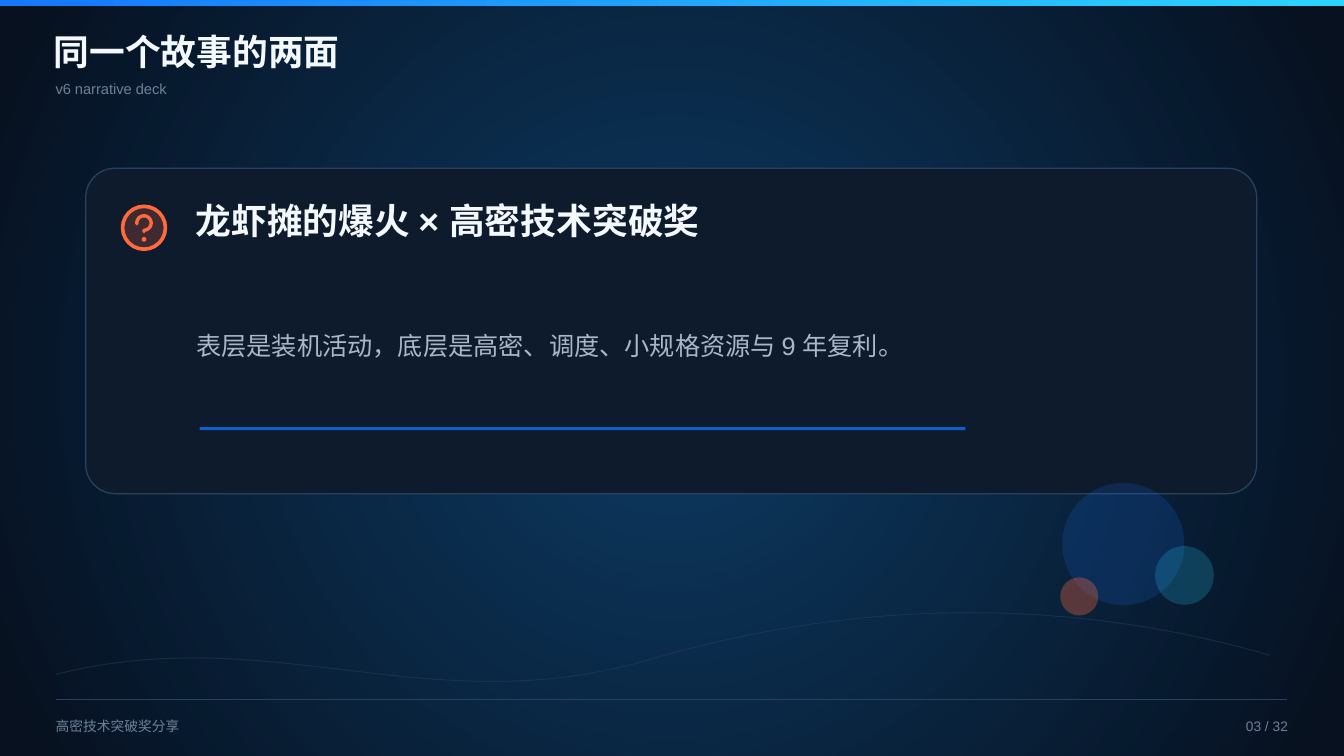
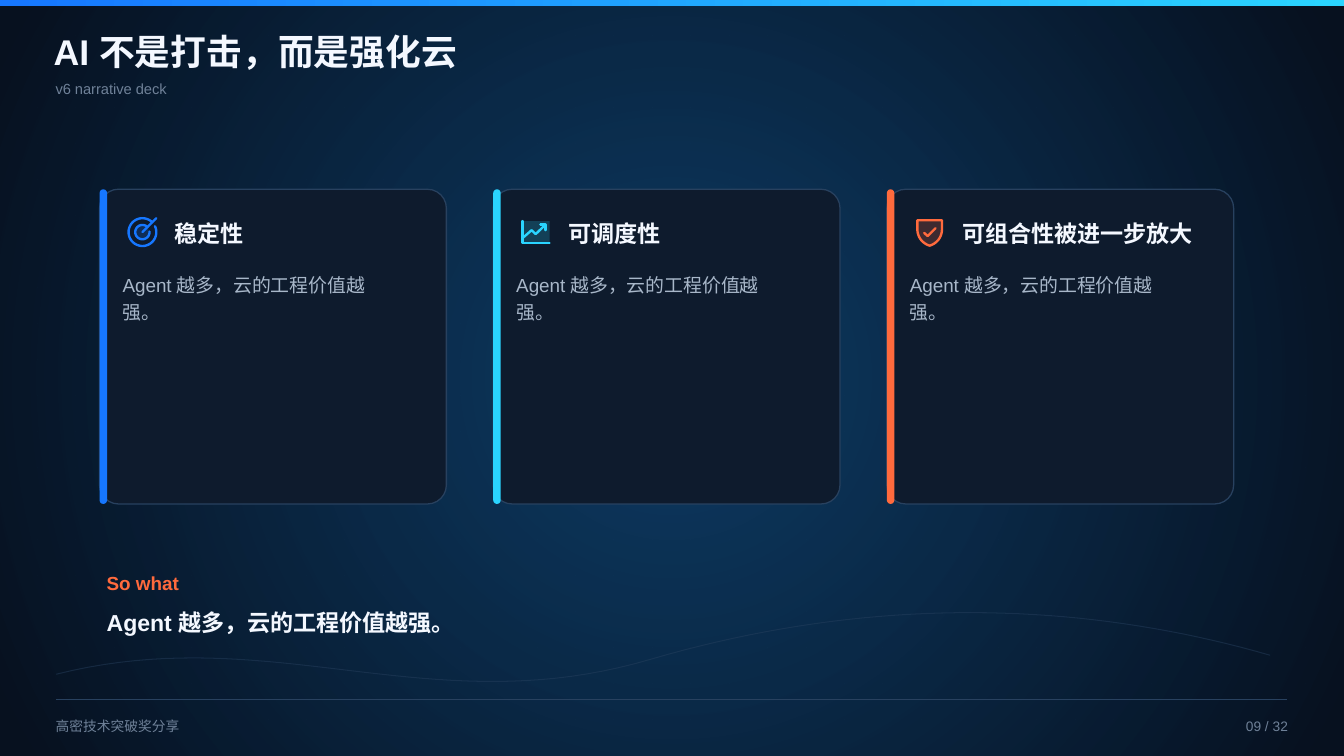
from math import cos, radians, sin

from lxml.etree import SubElement
from pptx import Presentation
from pptx.dml.color import RGBColor
from pptx.enum.shapes import MSO_CONNECTOR, MSO_SHAPE
from pptx.enum.text import MSO_AUTO_SIZE, PP_ALIGN
from pptx.oxml.ns import qn
from pptx.util import Cm, Pt

RECT, ROUND, OVAL = MSO_SHAPE.RECTANGLE, MSO_SHAPE.ROUNDED_RECTANGLE, MSO_SHAPE.OVAL
LINE = MSO_CONNECTOR.STRAIGHT
GROW, FIXED = MSO_AUTO_SIZE.SHAPE_TO_FIT_TEXT, MSO_AUTO_SIZE.NONE
LEFT, RIGHT = PP_ALIGN.LEFT, PP_ALIGN.RIGHT

FONT = "Arial"
WIDE, HIGH = 33.87, 19.05
HUES = {
    "night": "07111F", "card": "0E1B2D", "edge": "28415F",
    "blue": "1677FF", "cyan": "2AD4FF", "coral": "FF6A3D",
    "white": "F4F8FF", "mist": "A8B7C9", "gray": "6F8198",
}


# Colour
def hue(key):
    return RGBColor.from_string(HUES[key])


def fade(node, share):
    """Set the opacity, in percent, of the first colour below a node."""
    tint = next(node.iter(qn("a:srgbClr")))
    SubElement(tint, qn("a:alpha"), val=str(share * 1000))


def paint(shape, fill=None, alpha=100, line=None, width=1.0, clear=100):
    """Give a shape its fill and outline."""
    shape.shadow.inherit = False
    props = shape.element.spPr
    if fill:
        shape.fill.solid()
        shape.fill.fore_color.rgb = hue(fill)
        if alpha < 100:
            fade(props.find(qn("a:solidFill")), alpha)
    else:
        shape.fill.background()
    if line:
        shape.line.color.rgb = hue(line)
        shape.line.width = Pt(width)
        if clear < 100:
            fade(props.find(qn("a:ln")), clear)
    else:
        shape.line.fill.background()
    return shape


def blend(shape, *keys):
    """Fill a shape with a gradient from left to right."""
    shape.fill.gradient()
    shape.fill.gradient_angle = 0
    for stop, key in zip(shape.fill.gradient_stops, keys):
        stop.color.rgb = hue(key)
    return shape.element.spPr.find(qn("a:gradFill"))


# Shapes
def block(page, kind, x, y, w, h, curve=None, **look):
    shape = page.shapes.add_shape(kind, Cm(x), Cm(y), Cm(w), Cm(h))
    if curve is not None:
        shape.adjustments[0] = curve
    return paint(shape, **look)


def disc(page, x, y, r, **look):
    return block(page, OVAL, x - r, y - r, 2 * r, 2 * r, **look)


def glow(page, key, share):
    """Lay a radial light over the whole slide."""
    grad = blend(block(page, RECT, 0, 0, WIDE, HIGH), key, key)
    for stop, alpha in zip(grad.iter(qn("a:gs")), (share, 0)):
        fade(stop, alpha)
    grad.remove(grad.find(qn("a:lin")))
    path = SubElement(grad, qn("a:path"), {"path": "circle"})
    SubElement(path, qn("a:fillToRect"), l="50000", t="50000", r="50000", b="50000")


def pen(page, x, y, dots, close=False, **look):
    """Draw an outline through dots given relative to x, y."""
    spots = [(Cm(x + a), Cm(y + b)) for a, b in dots]
    draft = page.shapes.build_freeform(*spots[0], scale=1.0)
    draft.add_line_segments(spots[1:], close=close)
    shape = paint(draft.convert_to_shape(), **look)
    edge = shape.element.spPr.find(qn("a:ln"))
    edge.set("cap", "rnd")
    SubElement(edge, qn("a:round"))


def rule(page, x, y, w, key, width, alpha=100):
    line = page.shapes.add_connector(LINE, Cm(x), Cm(y), Cm(x + w), Cm(y))
    line.line.color.rgb = hue(key)
    line.line.width = Pt(width)
    props = line.element.spPr
    if alpha < 100:
        fade(props, alpha)
    SubElement(props, qn("a:effectLst"))


def label(page, words, x, y, w, h, size, key, bold=False, side=LEFT, lead=None):
    """Write one paragraph; a line pitch makes it a wrapped block."""
    box = page.shapes.add_textbox(Cm(x), Cm(y), Cm(w), Cm(h))
    frame = box.text_frame
    frame.margin_left = frame.margin_right = 0
    frame.margin_top = frame.margin_bottom = 0
    frame.word_wrap = lead is not None
    frame.auto_size = FIXED if lead else GROW
    para = frame.paragraphs[0]
    para.alignment = side
    if lead:
        para.line_spacing = Pt(lead)
    run = para.add_run()
    run.text = words
    font = run.font
    font.name, font.size, font.bold = FONT, Pt(size), bold
    font.color.rgb = hue(key)


# Curves
def arc(r, start, end, y=0, steps=48):
    turns = [radians(start + (end - start) * i / steps) for i in range(steps + 1)]
    return [(r * cos(t), y + r * sin(t)) for t in turns]


def bend(a, b, c, d, steps=40):
    """List the dots of a cubic curve."""
    dots = []
    for i in range(steps + 1):
        t = i / steps
        u = 1 - t
        parts = (u ** 3, 3 * u * u * t, 3 * u * t * t, t ** 3)
        dots.append(tuple(sum(k * p[n] for k, p in zip(parts, (a, b, c, d)))
                          for n in (0, 1)))
    return dots


# Icons, each centred on x, y
def query(page, x, y, key):
    disc(page, x, y, 0.54, fill=key, alpha=20, line=key, width=2.6)
    hook = [(-0.18, -0.1)] + arc(0.18, 180, 450, -0.12) + [(0, 0.1)]
    pen(page, x, y, hook, line=key, width=2.4)
    disc(page, x, y + 0.29, 0.06, fill=key)


def target(page, x, y, key):
    disc(page, x, y, 0.17, fill=key, alpha=20)
    for dots in (arc(0.35, -45, -385), arc(0.18, -45, -365),
                 [(0, 0), (0.35, -0.35)]):
        pen(page, x, y, dots, line=key, width=1.7)


def trend(page, x, y, key):
    block(page, RECT, x - 0.34, y - 0.28, 0.68, 0.56, fill=key, alpha=20)
    for dots in ([(-0.34, -0.28), (-0.34, 0.28), (0.34, 0.28)],
                 [(-0.34, 0.15), (-0.11, -0.05), (-0.01, 0.05), (0.24, -0.19)],
                 [(0.11, -0.19), (0.24, -0.19), (0.24, -0.05)]):
        pen(page, x, y, dots, line=key, width=1.7)


def shield(page, x, y, key):
    half = bend((0.31, -0.08), (0.31, 0.23), (0.05, 0.33), (0, 0.34))
    rim = [(-0.31, -0.3), (0.31, -0.3)] + half + [(-a, b) for a, b in half[::-1]]
    pen(page, x, y, rim, close=True, fill=key, alpha=20, line=key, width=1.7)
    tick = [(-0.14, 0.02), (-0.05, 0.1), (0.15, -0.1)]
    pen(page, x, y, tick, line=key, width=1.7)


# Shared frame
def start(deck, title, number):
    page = deck.slides.add_slide(deck.slide_layouts[6])
    page.background.fill.solid()
    page.background.fill.fore_color.rgb = hue("night")
    glow(page, "blue", 22)
    glow(page, "cyan", 12)
    wave = bend((1.42, 16.99), (6.88, 15.62), (10.85, 18.26), (16.41, 16.61))
    wave += bend((16.41, 16.61), (21.97, 14.99), (27.25, 15.14), (32, 16.51))[1:]
    pen(page, 0, 0, wave, line="edge", width=0.75, clear=45)
    blend(block(page, RECT, 0, 0, WIDE, 0.15), "blue", "cyan")
    label(page, title, 1.35, 0.76, len(title) * 0.95, 1.45, 25.5, "white", True)
    label(page, "v6 narrative deck", 1.4, 2.01, 3.43, 0.58, 10.5, "gray")
    rule(page, 1.42, 17.63, 31.01, "edge", 0.75)
    label(page, "高密技术突破奖分享", 1.4, 18.08, 3.33, 0.56, 9.8, "gray")
    label(page, f"{number:02} / 32", 31.19, 18.08, 1.27, 0.56, 9.8, "gray", side=RIGHT)
    return page


def card(page, x, y, w, h, curve):
    block(page, ROUND, x, y, w, h, curve, fill="card", line="edge", width=0.9)


def pillar(page, x, y, w, h, key, icon, head, note):
    """Draw a card with a coloured bar, an icon, a heading and a note."""
    card(page, x, y, w, h, 0.06)
    block(page, ROUND, x, y, 0.19, h, 0.5, fill=key)
    icon(page, x + 1.08, y + 1.08, key)
    label(page, head, x + 1.9, y + 0.76, len(head) * 0.66, 0.94, 16.5, "white", True)
    label(page, note, x + 0.58, y + 2, 6.3, 1.45, 13.5, "mist", lead=19.6)


# Slides
def story(deck):
    page = start(deck, "同一个故事的两面", 3)
    card(page, 2.16, 4.24, 29.51, 8.2, 0.09)
    query(page, 3.63, 5.74, "coral")
    label(page, "龙虾摊的爆火 × 高密技术突破奖", 4.93, 5, 14.22, 1.45, 25.5, "white", True)
    label(page, "表层是装机活动，底层是高密、调度、小规格资源与 9 年复利。",
          4.95, 8.33, 18.9, 1.02, 18, "mist")
    rule(page, 5.03, 10.8, 19.3, "blue", 2.25, 75)
    for x, y, r, key, alpha in ((28.31, 13.71, 1.54, "blue", 16),
                                (29.85, 14.5, 0.74, "cyan", 20),
                                (27.2, 15.03, 0.48, "coral", 32)):
        disc(page, x, y, r, fill=key, alpha=alpha)


def cloud(deck):
    page = start(deck, "AI 不是打击，而是强化云", 9)
    note = "Agent 越多，云的工程价值越强。"
    x, y, w, h, gap = 2.51, 4.77, 8.74, 7.93, 1.18
    items = (("blue", target, "稳定性"), ("cyan", trend, "可调度性"),
             ("coral", shield, "可组合性被进一步放大"))
    for i, (key, icon, head) in enumerate(items):
        pillar(page, x + i * (w + gap), y, w, h, key, icon, head, note)
    label(page, "So what", 2.69, 14.4, 2.08, 0.76, 13.5, "coral", True)
    label(page, note, 2.69, 15.32, 9.78, 0.94, 16.5, "white", True)


def main():
    deck = Presentation()
    deck.slide_width, deck.slide_height = Cm(WIDE), Cm(HIGH)
    story(deck)
    cloud(deck)
    deck.save("out.pptx")


if __name__ == "__main__":
    main()
